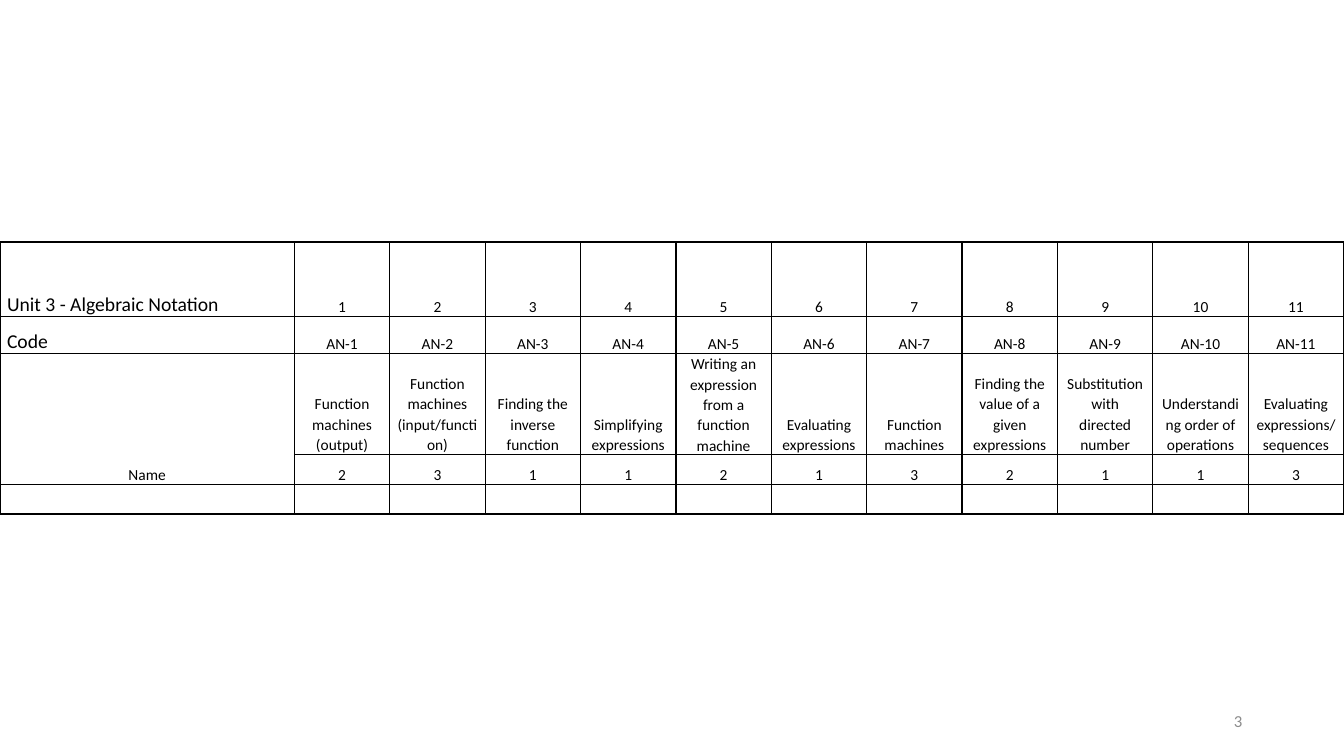
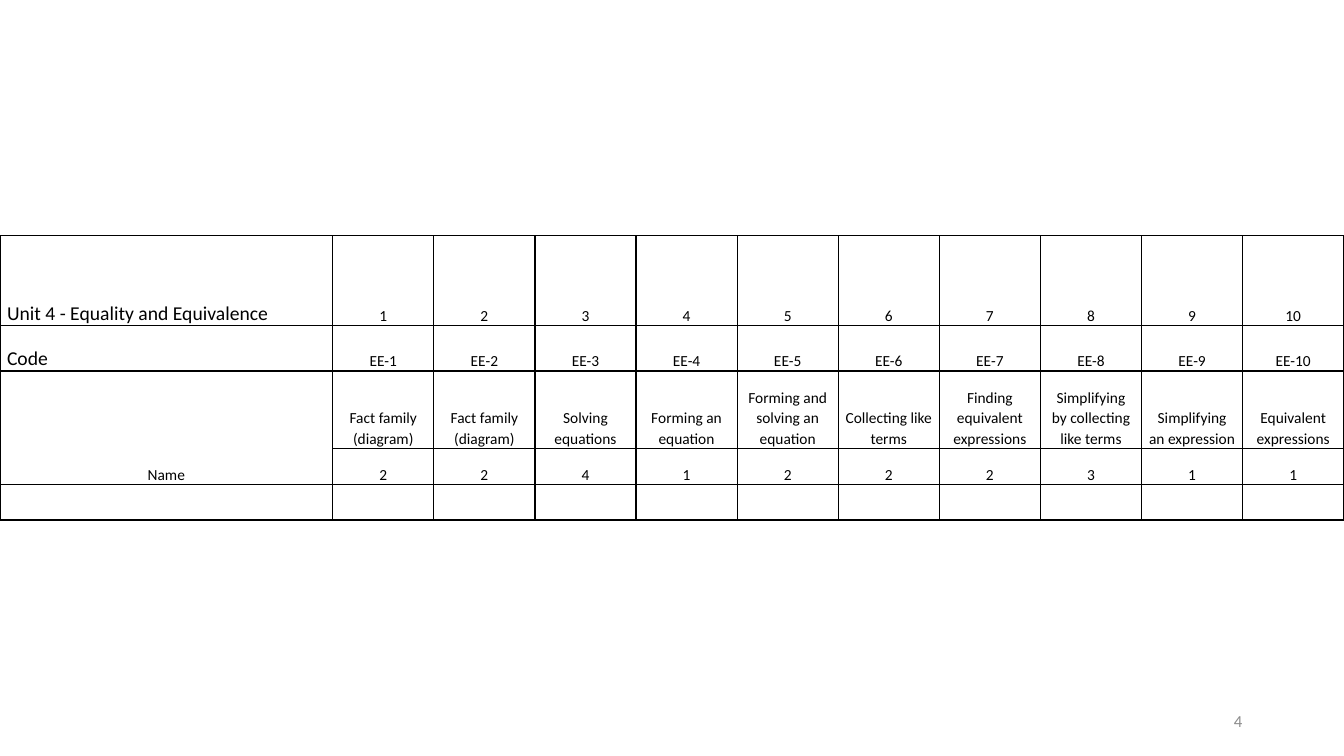
from lxml.etree import SubElement
from pptx import Presentation
from pptx.dml.color import RGBColor
from pptx.enum.text import MSO_ANCHOR, PP_ALIGN
from pptx.oxml.ns import qn
from pptx.util import Inches, Pt

# Shared style
SLIDE_WIDTH, SLIDE_HEIGHT = 13.33, 7.5
FONT = "Calibri"
BLACK, GREY = "000000", "8C8C8C"
HEADING_SIZE, BODY_SIZE, NUMBER_SIZE = 14, 11, 12
BORDER_WIDTH = 1
CELL_MARGIN = 0.07
LINE_SPACING = 1.07
NAME_ROW, MARKS_ROW = 2, 3

# Units: each question is a name and its marks
UNITS = [
    {
        "number": 3, "title": "Unit 3 - Algebraic Notation", "prefix": "AN",
        "top": 2.4, "label_width": 2.92, "heights": [0.74, 0.37, 1, 0.3, 0.29],
        "questions": [
            ("Function machines (output)", 2),
            ("Function machines (input/function)", 3),
            ("Finding the inverse function", 1),
            ("Simplifying expressions", 1),
            ("Writing an expression from a function machine", 2),
            ("Evaluating expressions", 1),
            ("Function machines", 3),
            ("Finding the value of a given expressions", 2),
            ("Substitution with directed number", 1),
            ("Understanding order of operations", 1),
            ("Evaluating expressions/sequences", 3),
        ],
    },
    {
        "number": 4, "title": "Unit 4 - Equality and Equivalence", "prefix": "EE",
        "top": 2.34, "label_width": 3.3, "heights": [0.89, 0.45, 0.77, 0.36, 0.35],
        "questions": [
            ("Fact family (diagram)", 2),
            ("Fact family (diagram)", 2),
            ("Solving equations", 4),
            ("Forming an equation", 1),
            ("Forming and solving an equation", 2),
            ("Collecting like terms", 2),
            ("Finding equivalent expressions", 2),
            ("Simplifying by collecting like terms", 3),
            ("Simplifying an expression", 1),
            ("Equivalent expressions", 1),
        ],
    },
]


def color(value):
    return RGBColor.from_string(value)


def write_text(paragraph, text, size=BODY_SIZE, text_color=BLACK,
               align=PP_ALIGN.CENTER, line_spacing=None):
    paragraph.alignment = align
    if line_spacing:
        paragraph.line_spacing = line_spacing
    if not text:
        # An empty cell keeps the body size, so its row stays low
        SubElement(paragraph._p, qn("a:endParaRPr"), sz=str(size * 100))
        return
    run = paragraph.add_run()
    run.text = text
    run.font.name = FONT
    run.font.size = Pt(size)
    run.font.color.rgb = color(text_color)


def add_borders(cell):
    properties = cell._tc.get_or_add_tcPr()
    for side in ("a:lnL", "a:lnR", "a:lnT", "a:lnB"):
        line = SubElement(properties, qn(side), w=str(Pt(BORDER_WIDTH)))
        fill = SubElement(line, qn("a:solidFill"))
        SubElement(fill, qn("a:srgbClr"), val=BLACK)


def format_cell(cell, text, **text_format):
    cell.margin_left = cell.margin_right = Inches(CELL_MARGIN)
    cell.margin_top = cell.margin_bottom = 0
    cell.vertical_anchor = MSO_ANCHOR.BOTTOM
    add_borders(cell)
    cell.fill.background()
    write_text(cell.text_frame.paragraphs[0], text,
               line_spacing=LINE_SPACING, **text_format)


def unit_rows(unit):
    questions = unit["questions"]
    numbers = range(1, len(questions) + 1)
    return [
        [unit["title"], *(str(number) for number in numbers)],
        ["Code", *(f"{unit['prefix']}-{number}" for number in numbers)],
        ["Name", *(name for name, marks in questions)],
        ["", *(str(marks) for name, marks in questions)],
        [""] * (len(questions) + 1),
    ]


def add_unit_table(slide, unit):
    rows = unit_rows(unit)
    column_count = len(rows[0])
    frame = slide.shapes.add_table(
        len(rows), column_count, Inches(0), Inches(unit["top"]),
        Inches(SLIDE_WIDTH), Inches(sum(unit["heights"])))
    table = frame.table
    table.first_row = table.horz_banding = False

    # Grid: a wide label column, then equal question columns
    question_width = (SLIDE_WIDTH - unit["label_width"]) / (column_count - 1)
    for index, column in enumerate(table.columns):
        column.width = Inches(question_width if index else unit["label_width"])
    for row, height in zip(table.rows, unit["heights"]):
        row.height = Inches(height)

    # Cells: the labels above the name row are larger and left-aligned
    for row_index, row in enumerate(rows):
        for column_index, text in enumerate(row):
            is_heading = column_index == 0 and row_index < NAME_ROW
            format_cell(table.cell(row_index, column_index), text,
                        size=HEADING_SIZE if is_heading else BODY_SIZE,
                        align=PP_ALIGN.LEFT if is_heading else PP_ALIGN.CENTER)
    table.cell(NAME_ROW, 0).merge(table.cell(MARKS_ROW, 0))


def add_slide_number(slide, number):
    box = slide.shapes.add_textbox(Inches(9.42), Inches(6.95), Inches(3), Inches(0.4))
    text_frame = box.text_frame
    text_frame.word_wrap = True
    text_frame.vertical_anchor = MSO_ANCHOR.MIDDLE
    write_text(text_frame.paragraphs[0], str(number), size=NUMBER_SIZE,
               text_color=GREY, align=PP_ALIGN.RIGHT)


def main():
    presentation = Presentation()
    presentation.slide_width = Inches(SLIDE_WIDTH)
    presentation.slide_height = Inches(SLIDE_HEIGHT)
    blank_layout = presentation.slide_layouts[6]
    for unit in UNITS:
        slide = presentation.slides.add_slide(blank_layout)
        add_slide_number(slide, unit["number"])
        add_unit_table(slide, unit)
    presentation.save("out.pptx")


if __name__ == "__main__":
    main()
